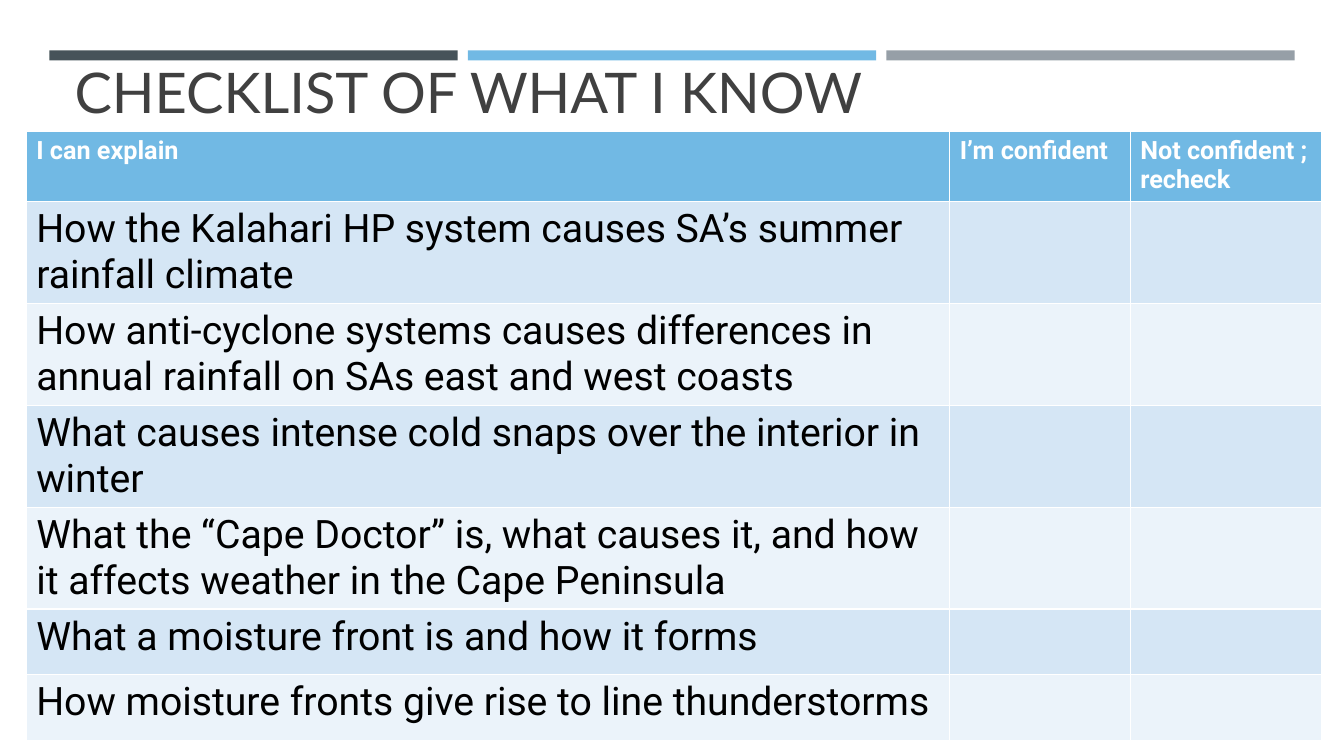
import pptx
import pptx.dml.color
import pptx.enum.shapes
import pptx.enum.text
import pptx.util
from dataclasses import dataclass
from pptx.util import Inches


@dataclass(frozen=True)
class Theme:
    slate: str = "465359"
    blue: str = "71B9E4"
    grey: str = "969FA7"
    band_dark: str = "D5E6F5"
    band_light: str = "EBF3FA"
    title_text: str = "404040"
    body_text: str = "000000"
    header_text: str = "FFFFFF"
    title_font: str = "Lato"
    body_font: str = "Roboto"
    title_size: int = 40
    body_size: int = 28
    header_size: int = 18


theme = Theme()


def paint(fill, color):
    fill.solid()
    fill.fore_color.rgb = pptx.dml.color.RGBColor.from_string(color)


def style_text(frame, font_name, size, color, bold=False):
    for paragraph in frame.paragraphs:
        for run in paragraph.runs:
            run.font.name = font_name
            run.font.size = pptx.util.Pt(size)
            run.font.bold = bold
            run.font.color.rgb = pptx.dml.color.RGBColor.from_string(color)


deck = pptx.Presentation()
deck.slide_width = Inches(13.33)
deck.slide_height = Inches(7.5)
slide = deck.slides.add_slide(deck.slide_layouts[5])

# Three accent bars across the top
for index, color in enumerate((theme.slate, theme.blue, theme.grey)):
    bar = slide.shapes.add_shape(
        pptx.enum.shapes.MSO_SHAPE.RECTANGLE,
        Inches(0.49 + 4.15 * index), Inches(0.5), Inches(4.05), Inches(0.1))
    bar.shadow.inherit = False
    paint(bar.fill, color)
    bar.line.fill.background()

# Title
title = slide.shapes.title
title.left, title.top = Inches(0.64), Inches(0.52)
title.width, title.height = Inches(12.06), Inches(0.77)
title.text_frame.text = "CHECKLIST OF WHAT I KNOW"
title.text_frame.word_wrap = True
title.text_frame.auto_size = pptx.enum.text.MSO_AUTO_SIZE.NONE
title.text_frame.vertical_anchor = pptx.enum.text.MSO_ANCHOR.BOTTOM
title.text_frame.paragraphs[0].alignment = pptx.enum.text.PP_ALIGN.LEFT
style_text(title.text_frame, theme.title_font, theme.title_size, theme.title_text)

# Checklist: a heading row, then one topic a row with two boxes to tick
headings = ("I can explain", "I’m confident", "Not confident ; recheck")
topics = (
    "How the Kalahari HP system causes SA’s summer rainfall climate",
    "How anti-cyclone systems causes differences in annual rainfall on SAs east and west coasts",
    "What causes intense cold snaps over the interior in winter",
    "What the “Cape Doctor” is, what causes it, and how it affects weather in the Cape Peninsula",
    "What a moisture front is and how it forms",
    "How moisture fronts give rise to line thunderstorms",
)
column_widths = (9.16, 1.79, 1.9)
header_height, topic_height = 0.7, 0.65
checklist = slide.shapes.add_table(
    len(topics) + 1, len(headings), Inches(0.26), Inches(1.3),
    Inches(sum(column_widths)),
    Inches(header_height + topic_height * len(topics))).table

for column, width in zip(checklist.columns, column_widths):
    column.width = Inches(width)
for row in checklist.rows:
    row.height = Inches(topic_height)
checklist.rows[0].height = Inches(header_height)

for cell, heading in zip(checklist.rows[0].cells, headings):
    cell.text_frame.text = heading
    paint(cell.fill, theme.blue)
    style_text(cell.text_frame, theme.body_font, theme.header_size,
               theme.header_text, bold=True)

for number, topic in enumerate(topics, start=1):
    topic_cell = checklist.cell(number, 0)
    topic_cell.text_frame.text = topic
    style_text(topic_cell.text_frame, theme.body_font, theme.body_size, theme.body_text)
    for cell in checklist.rows[number].cells:
        paint(cell.fill, theme.band_dark if number % 2 else theme.band_light)

deck.save("out.pptx")
